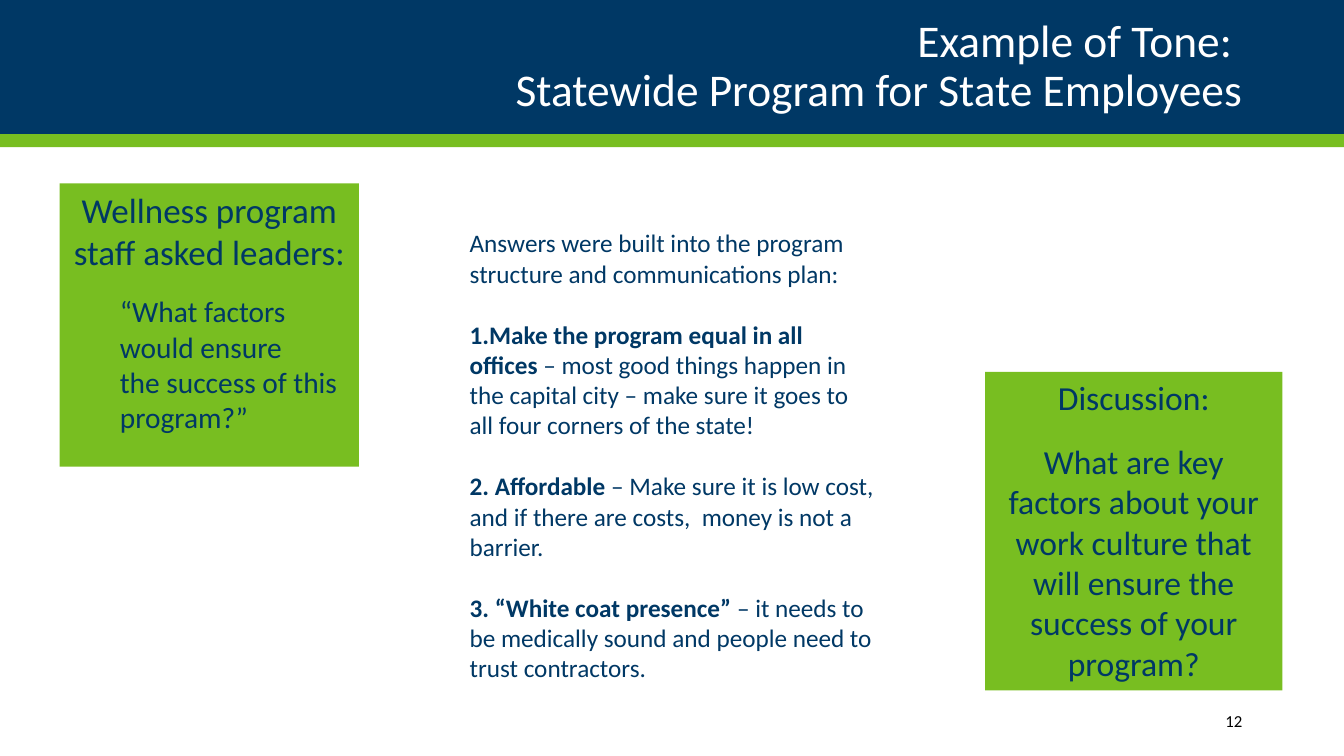
from pptx import Presentation
from pptx.dml.color import RGBColor
from pptx.enum.shapes import MSO_SHAPE
from pptx.enum.text import MSO_ANCHOR, PP_ALIGN
from pptx.util import Inches, Pt

NAVY = RGBColor(0x00, 0x38, 0x65)
GREEN = RGBColor(0x78, 0xBE, 0x21)
WHITE = RGBColor(0xFF, 0xFF, 0xFF)
BLACK = RGBColor(0x00, 0x00, 0x00)
FONT = "Calibri"
RECTANGLE = MSO_SHAPE.RECTANGLE
TOP, MIDDLE = MSO_ANCHOR.TOP, MSO_ANCHOR.MIDDLE
LEFT, CENTER, RIGHT = PP_ALIGN.LEFT, PP_ALIGN.CENTER, PP_ALIGN.RIGHT

prs = Presentation()
prs.slide_width, prs.slide_height = Inches(13.33), Inches(7.5)
slide = prs.slides.add_slide(prs.slide_layouts[6])


def add_box(left, top, width, height, fill=None, anchor=TOP):
    """Add a text area placed in percent of the slide's size."""
    x, w = (int(prs.slide_width * share / 100) for share in (left, width))
    y, h = (int(prs.slide_height * share / 100) for share in (top, height))
    if fill is None:
        box = slide.shapes.add_textbox(x, y, w, h)
    else:
        box = slide.shapes.add_shape(RECTANGLE, x, y, w, h)
        box.shadow.inherit = False
        box.fill.solid()
        box.fill.fore_color.rgb = fill
        box.line.fill.background()
    box.text_frame.word_wrap = True
    box.text_frame.vertical_anchor = anchor
    return box.text_frame


def style(paragraph, size, color=NAVY, align=LEFT):
    paragraph.alignment = align
    for run in paragraph.runs:
        run.font.name = FONT
        run.font.size = Pt(size)
        run.font.color.rgb = color


# Header band and stripe
add_box(0, 0, 100, 17.73, NAVY)
add_box(0, 17.73, 100, 1.73, GREEN)

# Title
title = add_box(6.9, 2.27, 86.27, 13.33, anchor=MIDDLE).paragraphs[0]
title.text = "Example of Tone: \vStatewide Program for State Employees"
title.line_spacing = 0.9
style(title, 32.4, WHITE, RIGHT)

# Question put to leaders
leaders = add_box(4.43, 24.27, 22.28, 37.47, GREEN)
leaders.text = "Wellness program staff asked leaders:"
style(leaders.paragraphs[0], 25, align=CENTER)
leaders.paragraphs[0].space_after = Pt(10)
question = leaders.add_paragraph()
question.text = "“What factors would ensure\vthe success of this program?”"
question.space_before = Pt(5)
style(question, 21)
leaders_indent = question._p.get_or_add_pPr()
leaders_indent.set("marL", str(Inches(0.5)))
leaders_indent.set("indent", "0")

# Answers: bold lead, then explanation
ANSWERS = [
    ("1.Make the program equal in all offices ",
     "– most good things happen in the capital city – "
     "make sure it goes to all four corners of the state!"),
    ("2. Affordable ",
     "– Make sure it is low cost, and if there are costs,  money is not a barrier."),
    ("3. “White coat presence” ",
     "– it needs to be medically sound and people need to trust contractors."),
]
answers = add_box(34.21, 29.47, 31.58, 61.87)
answers.text = "Answers were built into the program structure and communications plan:"
style(answers.paragraphs[0], 18)
for lead, explanation in ANSWERS:
    answer = answers.add_paragraph()
    answer.space_before = Pt(22)
    for words, bold in ((lead, True), (explanation, False)):
        run = answer.add_run()
        run.text = words
        run.font.bold = bold
    style(answer, 18)

# Discussion
discussion = add_box(73.29, 49.2, 22.13, 42.13, GREEN)
discussion.text = ("Discussion:\nWhat are key factors about your work culture "
                   "that will ensure the success of your program?")
for paragraph in discussion.paragraphs:
    style(paragraph, 24, align=CENTER)
discussion.paragraphs[1].space_before = Pt(17)

# Slide number
number = add_box(81.17, 92.67, 12, 5.33, anchor=MIDDLE)
number.text = "12"
style(number.paragraphs[0], 12, BLACK, RIGHT)

prs.save("out.pptx")
